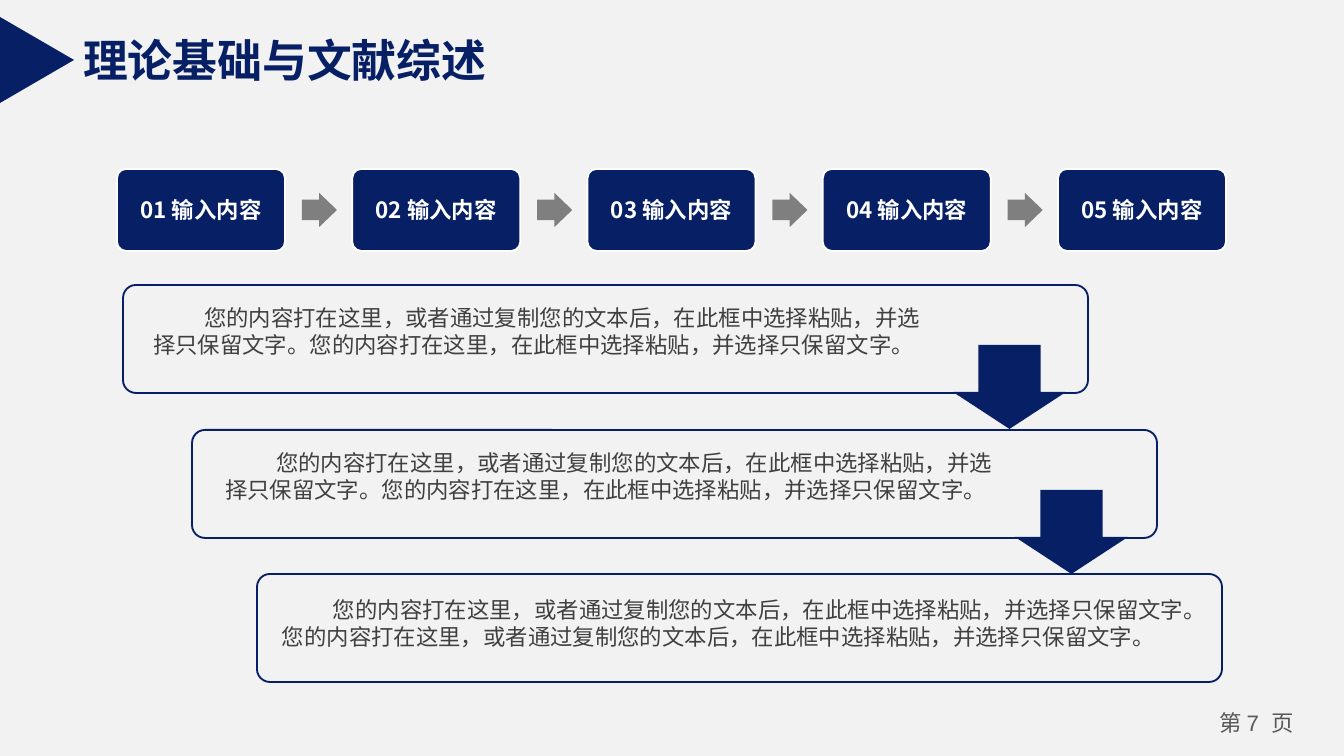
from lxml import etree
from pptx import Presentation
from pptx.dml.color import RGBColor
from pptx.enum.shapes import MSO_SHAPE
from pptx.enum.text import MSO_ANCHOR, PP_ALIGN
from pptx.oxml.ns import qn
from pptx.util import Emu, Pt

ROUND, TRIANGLE = MSO_SHAPE.ROUNDED_RECTANGLE, MSO_SHAPE.ISOSCELES_TRIANGLE
RIGHT, DOWN = MSO_SHAPE.RIGHT_ARROW, MSO_SHAPE.DOWN_ARROW
MIDDLE, TOP = MSO_ANCHOR.MIDDLE, MSO_ANCHOR.TOP
LEFT, CENTER = PP_ALIGN.LEFT, PP_ALIGN.CENTER

SCALE = 914400 / 134.4
NAVY, GREY, WHITE, PAPER = "071F65", "7F7F7F", "FFFFFF", "F2F2F2"
INK, PAGE_INK = "404040", "595959"
CJK, LATIN = "Noto Sans CJK SC", "Arial"

OPENING = "您的内容打在这里，或者通过复制您的文本后，在此框中选择粘贴，并选择只保留文字。"
SHORT = OPENING + "您的内容打在这里，在此框中选择粘贴，并选择只保留文字。"
LONG = OPENING * 2
STEPS = ["01 输入内容", "02 输入内容", "03 输入内容", "04 输入内容", "05 输入内容"]
PANELS = [
    {"x": 123, "y": 285, "text": SHORT, "text_box": (17, 12, 796, 63), "arrow_x": 830},
    {"x": 192, "y": 430, "text": SHORT, "text_box": (20, 12, 796, 63), "arrow_x": 823},
    {"x": 257, "y": 574, "text": LONG, "text_box": (12, 15, 935, 63), "arrow_x": None},
]


def px(n):
    """Convert pixels to EMU."""
    return Emu(round(n * SCALE))


def rgb(value):
    """Turn a hex string into a colour."""
    return RGBColor.from_string(value)


def add_shape(slide, kind, box, fill, line=None, adj=()):
    """Add a flat preset shape."""
    sp = slide.shapes.add_shape(kind, *map(px, box))
    sp.shadow.inherit = False
    sp.fill.solid()
    sp.fill.fore_color.rgb = rgb(fill)
    if line:
        sp.line.color.rgb = rgb(line)
        sp.line.width = Pt(1)
    else:
        sp.line.fill.background()
    for i, value in enumerate(adj):
        sp.adjustments[i] = value
    return sp


def set_frame(tf, margins=(13, 7), anchor=TOP, wrap=True):
    """Set the margins, anchor and wrapping of a text frame."""
    mx, my = map(px, margins)
    fmt = {"margin_left": mx, "margin_right": mx, "margin_top": my,
           "margin_bottom": my, "vertical_anchor": anchor, "word_wrap": wrap}
    for name, value in fmt.items():
        setattr(tf, name, value)


def add_run(p, text, size, color, bold=False, font=CJK):
    """Append a formatted run to a paragraph."""
    r = p.add_run()
    r.text = text
    for name, value in {"size": Pt(size), "bold": bold, "name": font}.items():
        setattr(r.font, name, value)
    r.font.color.rgb = rgb(color)
    ea = etree.Element(qn("a:ea"), typeface=CJK)
    r.font._element.find(qn("a:latin")).addnext(ea)


def add_header(slide, box):
    """Place the triangle marker and the title."""
    x, y, w, h = box
    marker = add_shape(slide, TRIANGLE, (x - 6, y + 6, h, 74), NAVY)
    marker.rotation = 90
    title = slide.shapes.title
    places = zip(("left", "top", "width", "height"), (x + 70, y + 9, w - 70, 67))
    for name, value in places:
        setattr(title, name, px(value))
    tf = title.text_frame
    set_frame(tf, anchor=MIDDLE, wrap=False)
    p = tf.paragraphs[0]
    p.alignment = LEFT
    add_run(p, "理论基础与文献综述", 24, NAVY, True, LATIN)


def add_steps(slide, box):
    """Place the row of step chips joined by arrows."""
    x, y, w, h = box
    chip = 168
    pitch = (w - chip) / (len(STEPS) - 1)
    for i, text in enumerate(STEPS):
        left = x + i * pitch
        sp = add_shape(slide, ROUND, (left, y, chip, h), NAVY, WHITE, [0.11])
        set_frame(sp.text_frame, anchor=MIDDLE)
        p = sp.text_frame.paragraphs[0]
        p.alignment = CENTER
        add_run(p, text, 12, WHITE, True)
        if i < len(STEPS) - 1:
            arrow = (left + 185, y + (h - 34) / 2, 35, 34)
            add_shape(slide, RIGHT, arrow, GREY, adj=[0.6, 0.52])


def add_panel(slide, box, text, text_box, arrow_x):
    """Place an outlined panel with its text and the arrow to the next one."""
    x, y, w, h = box
    add_shape(slide, ROUND, box, PAPER, NAVY, [0.12])
    dx, dy, tw, th = text_box
    tb = slide.shapes.add_textbox(*map(px, (x + dx, y + dy, tw, th)))
    set_frame(tb.text_frame)
    p = tb.text_frame.paragraphs[0]
    p.line_spacing = Pt(14.5)
    p._p.get_or_add_pPr().set("indent", str(px(51)))
    add_run(p, text, 12, INK)
    if arrow_x is not None:
        add_shape(slide, DOWN, (x + arrow_x, y + 60, 113, 84), NAVY, adj=[0.55, 0.44])


def add_page_number(slide, box):
    """Place the page number."""
    tb = slide.shapes.add_textbox(*map(px, box))
    set_frame(tb.text_frame, (9, 5))
    p = tb.text_frame.paragraphs[0]
    p.alignment = CENTER
    for text, font in (("第 ", CJK), ("7  ", LATIN), ("页", CJK)):
        add_run(p, text, 12, PAGE_INK, font=font)


def main():
    """Build and save the slide."""
    prs = Presentation()
    prs.slide_width, prs.slide_height = px(1344), px(756)
    slide = prs.slides.add_slide(prs.slide_layouts[5])
    slide.background.fill.solid()
    slide.background.fill.fore_color.rgb = rgb(PAPER)
    add_header(slide, (0, 17, 504, 86))
    add_steps(slide, (117, 169, 1109, 82))
    for panel in PANELS:
        box = (panel["x"], panel["y"], 965, 108)
        add_panel(slide, box, panel["text"], panel["text_box"], panel["arrow_x"])
    add_page_number(slide, (1196, 704, 121, 40))
    prs.save("out.pptx")


if __name__ == "__main__":
    main()
